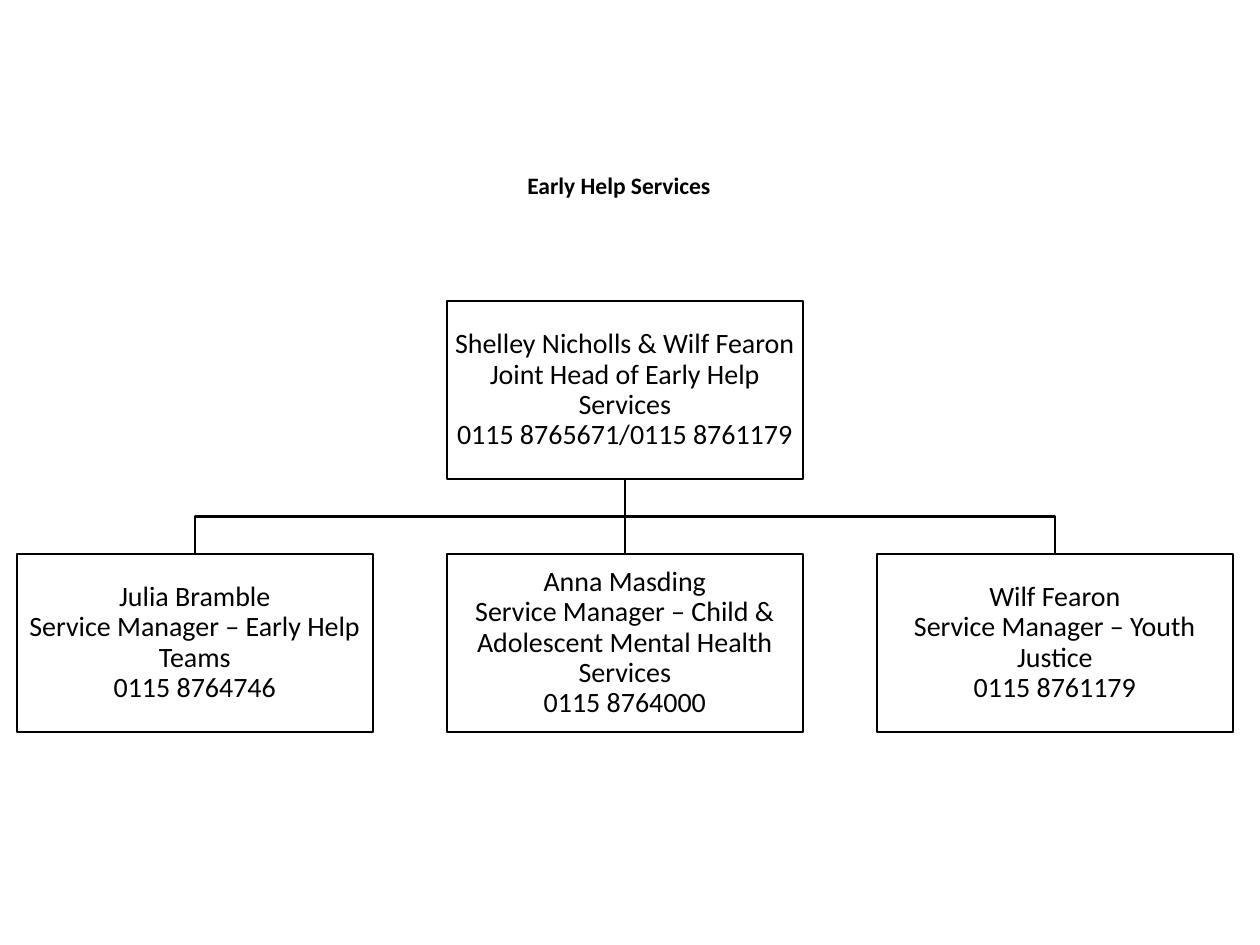
from pptx import Presentation
from pptx.dml.color import RGBColor
from pptx.enum.shapes import MSO_CONNECTOR, MSO_SHAPE
from pptx.enum.text import MSO_ANCHOR, PP_ALIGN
from pptx.oxml.ns import qn
from pptx.util import Pt
from lxml.etree import SubElement

BLACK = RGBColor(0, 0, 0)
WHITE = RGBColor(255, 255, 255)
FONT = "Calibri"

BOX_WIDTH, BOX_HEIGHT = 152.6, 76.3
LEFT, PITCH = 7.2, 184.3
HEAD_TOP, MANAGER_TOP = 129.1, 237.4

HEAD = "Shelley Nicholls & Wilf Fearon\nJoint Head of Early Help Services\n0115 8765671/0115 8761179"
MANAGERS = [
    "Julia Bramble\nService Manager – Early Help Teams\n0115 8764746",
    "Anna Masding\nService Manager – Child & Adolescent Mental Health Services\n0115 8764000",
    "Wilf Fearon\nService Manager – Youth Justice\n0115 8761179",
]


def write_text(shape, text, size, bold=False, margin=0.72):
    """Fill a shape with centred text."""
    text_frame = shape.text_frame
    text_frame.text = text
    text_frame.word_wrap = True
    text_frame.vertical_anchor = MSO_ANCHOR.MIDDLE
    text_frame.margin_left = text_frame.margin_right = Pt(margin)
    text_frame.margin_top = text_frame.margin_bottom = Pt(margin)
    for paragraph in text_frame.paragraphs:
        paragraph.alignment = PP_ALIGN.CENTER
        paragraph.line_spacing = 0.9
        for run in paragraph.runs:
            run.font.name = FONT
            run.font.size = Pt(size)
            run.font.bold = bold
            run.font.color.rgb = BLACK


def style_line(line):
    """Make a line thin and black."""
    line.color.rgb = BLACK
    line.width = Pt(1)


def add_title(slide, text):
    """Add the slide heading."""
    title = slide.shapes.add_textbox(Pt(32.4), Pt(50.4), Pt(465.8), Pt(59))
    write_text(title, text, 10.1, bold=True)


def add_box(slide, column, top, text):
    """Add one box of the organisation chart."""
    box = slide.shapes.add_shape(
        MSO_SHAPE.RECTANGLE, Pt(LEFT + column * PITCH), Pt(top), Pt(BOX_WIDTH), Pt(BOX_HEIGHT))
    box.shadow.inherit = False
    box.fill.solid()
    box.fill.fore_color.rgb = WHITE
    style_line(box.line)
    write_text(box, text, 12)
    return box


def add_straight_link(slide, upper, lower):
    """Join two boxes that stand one above the other."""
    link = slide.shapes.add_connector(MSO_CONNECTOR.STRAIGHT, 0, 0, 0, 0)
    link.begin_connect(upper, 2)
    link.end_connect(lower, 0)
    style_line(link.line)
    SubElement(link._element.spPr, qn("a:effectLst"))


def add_elbow_link(slide, upper, lower):
    """Draw a bent line between two boxes in different columns."""
    start_x = upper.left + upper.width // 2
    end_x = lower.left + lower.width // 2
    start_y = upper.top + upper.height
    middle_y = (start_y + lower.top) // 2
    builder = slide.shapes.build_freeform(start_x, start_y)
    builder.add_line_segments(
        [(start_x, middle_y), (end_x, middle_y), (end_x, lower.top)], close=False)
    link = builder.convert_to_shape()
    link.shadow.inherit = False
    link.fill.background()
    style_line(link.line)


def main():
    """Build the slide and save it."""
    presentation = Presentation()
    presentation.slide_width = Pt(540)
    presentation.slide_height = Pt(405)
    slide = presentation.slides.add_slide(presentation.slide_layouts[6])
    add_title(slide, "Early Help Services")
    head = add_box(slide, 1, HEAD_TOP, HEAD)
    for column, text in enumerate(MANAGERS):
        manager = add_box(slide, column, MANAGER_TOP, text)
        add_link = add_straight_link if manager.left == head.left else add_elbow_link
        add_link(slide, head, manager)
    presentation.save("out.pptx")


if __name__ == "__main__":
    main()
